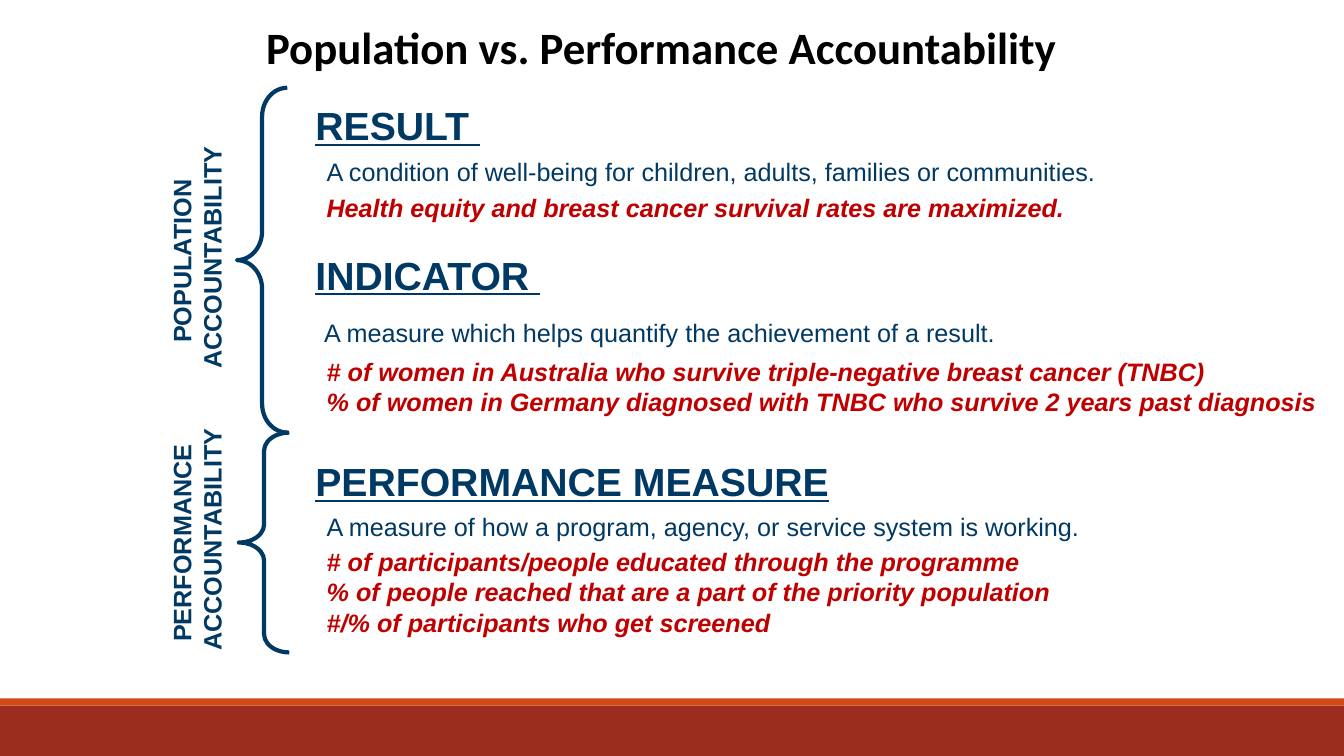
from dataclasses import dataclass
from pptx import Presentation, util as u
from pptx.dml.color import RGBColor
from pptx.enum import shapes, text
from pptx.oxml.ns import qn
from lxml import etree


@dataclass(frozen=True)
class Theme:
    navy: str = "003964"
    red: str = "C00000"
    black: str = "000000"
    brick: str = "9B2D1F"
    rust: str = "D34817"
    sans: str = "Arial"
    face: str = "Calibri"
    title: int = 32
    head: int = 28
    body: int = 18


T = Theme()
W, H = 33.87, 19.05
Cm = u.Cm


def place(box, x, y, w, h):
    box.left, box.top, box.width, box.height = Cm(x), Cm(y), Cm(w), Cm(h)


def write(box, lines, size, color, font=T.sans, align=text.PP_ALIGN.LEFT,
          wrap=True, **style):
    frame = box.text_frame
    frame.word_wrap = wrap
    frame.auto_size = text.MSO_AUTO_SIZE.NONE
    frame.vertical_anchor = text.MSO_ANCHOR.TOP
    for i, line in enumerate(lines):
        para = frame.add_paragraph() if i else frame.paragraphs[0]
        para.alignment = align
        para.space_before = u.Pt(0)
        run = para.add_run()
        run.text = line
        run.font.name, run.font.size = font, u.Pt(size)
        run.font.color.rgb = RGBColor.from_string(color)
        for key, val in style.items():
            setattr(run.font, key, val)


# Slide with a title and two lists
deck = Presentation()
deck.slide_width, deck.slide_height = Cm(W), Cm(H)
slide = deck.slides.add_slide(deck.slide_layouts[3])
items = slide.shapes

# Footer bands
for y, h, color in [(17.78, 1.27, T.brick), (17.6, 0.18, T.rust)]:
    band = items.add_shape(shapes.MSO_SHAPE.RECTANGLE,
                           Cm(0), Cm(y), Cm(W), Cm(h))
    band.shadow.inherit = False
    band.fill.solid()
    band.fill.fore_color.rgb = RGBColor.from_string(color)
    band.line.fill.background()

# Title
place(items.title, 4.06, 0.38, 25.22, 1.63)
write(items.title, ["Population vs. Performance Accountability"], T.title,
      T.black, T.face, text.PP_ALIGN.CENTER, bold=True)

# Headings
for label, y in [("RESULT ", 2.44), ("INDICATOR ", 6.2),
                 ("PERFORMANCE MEASURE", 11.4)]:
    box = items.add_textbox(Cm(7.7), Cm(y), Cm(14.4), Cm(1.45))
    write(box, [label], T.head, T.navy, bold=True, underline=True)

# Definitions
for line, x, y in [
    ("A condition of well-being for children, adults, families or "
     "communities.", 7.98, 3.81),
    ("A measure which helps quantify the achievement of a result.",
     7.92, 7.88),
    ("A measure of how a program, agency, or service system is working.",
     7.98, 12.75),
]:
    box = items.add_textbox(Cm(x), Cm(y), Cm(21), Cm(1.02))
    write(box, [line], T.body, T.navy)

# Examples: one line, then the two lists
goal = items.add_textbox(0, 0, 0, 0)
for box, y, h, lines in [
    (goal, 4.72, 1.02,
     ["Health equity and breast cancer survival rates are maximized."]),
    (slide.placeholders[1], 8.84, 1.8,
     ["# of women in Australia who survive triple-negative breast cancer "
      "(TNBC)",
      "% of women in Germany diagnosed with TNBC who survive 2 years past "
      "diagnosis"]),
    (slide.placeholders[2], 13.64, 2.57,
     ["# of participants/people educated through the programme",
      "% of people reached that are a part of the priority population",
      "#/% of participants who get screened"]),
]:
    place(box, 7.98, y, 25.89, h)
    write(box, lines, T.body, T.red, bold=True, italic=True)
    for para in box.text_frame.paragraphs:
        props = para._p.get_or_add_pPr()
        props.set("marL", "0")
        props.set("indent", "0")
        etree.SubElement(props, qn("a:buNone"))

# Braces with their turned labels
for name, x, y, h, bend, top in [
    ("POPULATION ", 5.97, 2.21, 8.69, 0.57, 5.59),
    ("PERFORMANCE ", 6.02, 10.9, 5.54, 0.36, 12.7),
]:
    brace = items.add_shape(shapes.MSO_SHAPE.RIGHT_BRACE,
                            Cm(x), Cm(y), Cm(1.27), Cm(h))
    brace.rotation = 180
    brace.adjustments[0] = bend
    brace.shadow.inherit = False
    brace.fill.background()
    brace.line.color.rgb = RGBColor.from_string(T.navy)
    brace.line.width = u.Pt(3)
    side = items.add_textbox(Cm(1.88), Cm(top), Cm(6.17), Cm(1.8))
    side.rotation = 270
    write(side, [name, "ACCOUNTABILITY"], T.body, T.navy,
          align=text.PP_ALIGN.CENTER, wrap=False, bold=True)

deck.save("out.pptx")
